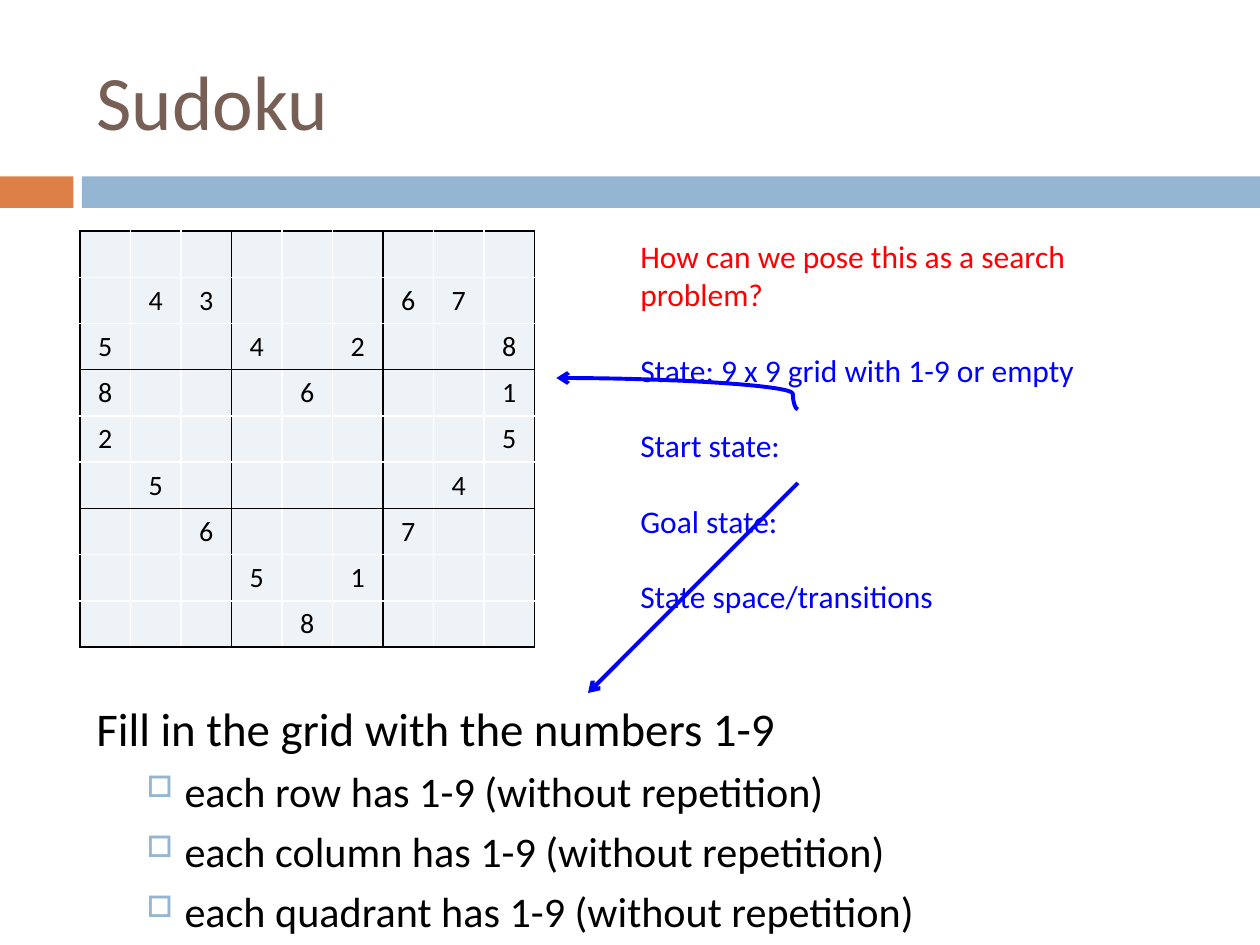
from dataclasses import dataclass

from lxml import etree
from pptx import Presentation
from pptx.dml.color import RGBColor
from pptx.enum.shapes import MSO_CONNECTOR, MSO_SHAPE
from pptx.enum.text import MSO_ANCHOR, PP_ALIGN
from pptx.oxml.ns import qn
from pptx.util import Inches, Pt

RECTANGLE = MSO_SHAPE.RECTANGLE
STRAIGHT, CURVE = MSO_CONNECTOR.STRAIGHT, MSO_CONNECTOR.CURVE
CENTER = PP_ALIGN.CENTER
TOP, MIDDLE = MSO_ANCHOR.TOP, MSO_ANCHOR.MIDDLE

COLUMNS, ROWS = 120, 90  # layout grid of the slide
CELL = Inches(10) / COLUMNS
BLOCK = 3
SIDE = BLOCK * BLOCK


@dataclass(frozen=True)
class Theme:
    font: str = "Calibri"
    title: str = "775F55"
    orange: str = "DD8047"
    blue: str = "94B6D2"
    cell: str = "EEF3F7"
    black: str = "000000"
    white: str = "FFFFFF"
    question: str = "FF0000"
    answer: str = "0000FF"
    title_size: float = 44
    body_size: float = 26.8
    bullet_size: float = 24.1
    note_size: float = 18
    digit_size: float = 16


@dataclass(frozen=True)
class Box:
    """A rectangle in grid columns and rows."""
    column: float
    row: float
    width: float
    height: float

    def lengths(self) -> list[int]:
        return [grid(n) for n in (self.column, self.row, self.width, self.height)]


@dataclass(frozen=True)
class Line:
    text: str
    size: float
    color: str
    space_before: float = 0
    bullet: bool = False


@dataclass(frozen=True)
class Arrow:
    kind: MSO_CONNECTOR
    start: tuple[float, float]
    end: tuple[float, float]
    bend: int | None = None


THEME = Theme()
BARS = [(Box(0, 16.8, 7, 3), THEME.orange), (Box(7.8, 16.8, 112.2, 3), THEME.blue)]
TITLE = [Line("Sudoku", THEME.title_size, THEME.title)]
RULES = [Line("Fill in the grid with the numbers 1-9", THEME.body_size, THEME.black, 7)] + [
    Line(f"each {part} has 1-9 (without repetition)", THEME.bullet_size, THEME.black, 5.5, True)
    for part in ("row", "column", "quadrant")
]
NOTES = [Line("How can we pose this as a search problem?", THEME.note_size, THEME.question)] + [
    Line(text, THEME.note_size, THEME.answer, 21.6)
    for text in ("State: 9 x 9 grid with 1-9 or empty", "Start state:",
                 "Goal state:", "State space/transitions")
]
PUZZLE = [
    ".........",
    ".43...67.",
    "5..4.2..8",
    "8...6...1",
    "2.......5",
    ".5.....4.",
    "..6...7..",
    "...5.1...",
    "....8....",
]
ARROWS = [
    Arrow(CURVE, (76, 39), (53, 36), bend=2100),
    Arrow(STRAIGHT, (76, 46), (56, 66)),
]


def grid(count: float) -> int:
    return round(count * CELL)


def rgb(color: str) -> RGBColor:
    return RGBColor.from_string(color)


def add_bar(slide, box: Box, color: str) -> None:
    bar = slide.shapes.add_shape(RECTANGLE, *box.lengths())
    bar.shadow.inherit = False
    bar.fill.solid()
    bar.fill.fore_color.rgb = rgb(color)
    bar.line.fill.background()


def add_bullet(paragraph) -> None:
    properties = paragraph._p.get_or_add_pPr()
    properties.set("marL", str(Inches(0.7)))
    properties.set("indent", str(Inches(-0.3)))
    color = etree.SubElement(properties, qn("a:buClr"))
    etree.SubElement(color, qn("a:srgbClr"), val=THEME.blue)
    etree.SubElement(properties, qn("a:buSzPct"), val="70000")
    etree.SubElement(properties, qn("a:buChar"), char="□")


def style_runs(paragraph, size: float, color: str) -> None:
    for run in paragraph.runs:
        run.font.name = THEME.font
        run.font.size = Pt(size)
        run.font.color.rgb = rgb(color)


def add_text(slide, box: Box, lines: list[Line], anchor: MSO_ANCHOR = TOP) -> None:
    text_frame = slide.shapes.add_textbox(*box.lengths()).text_frame
    text_frame.word_wrap = True
    text_frame.vertical_anchor = anchor
    text_frame.text = "\n".join(line.text for line in lines)
    for paragraph, line in zip(text_frame.paragraphs, lines):
        paragraph.space_before = Pt(line.space_before)
        if line.bullet:
            paragraph.level = 1
            add_bullet(paragraph)
        style_runs(paragraph, line.size, line.color)


def set_borders(cell, row: int, column: int) -> None:
    """Black on the edges of each block, white inside it."""
    edges = {"a:lnL": column, "a:lnR": column + 1, "a:lnT": row, "a:lnB": row + 1}
    properties = cell._tc.get_or_add_tcPr()
    for position, (tag, edge) in enumerate(edges.items()):
        border = etree.Element(qn(tag), w=str(Pt(1)))
        fill = etree.SubElement(border, qn("a:solidFill"))
        color = THEME.white if edge % BLOCK else THEME.black
        etree.SubElement(fill, qn("a:srgbClr"), val=color)
        properties.insert(position, border)


def add_puzzle(slide, box: Box) -> None:
    table = slide.shapes.add_table(SIDE, SIDE, *box.lengths()).table
    table.first_row = table.horz_banding = False
    for row, digits in enumerate(PUZZLE):
        for column, digit in enumerate(digits):
            cell = table.cell(row, column)
            cell.fill.solid()
            cell.fill.fore_color.rgb = rgb(THEME.cell)
            set_borders(cell, row, column)
            paragraph = cell.text_frame.paragraphs[0]
            paragraph.alignment = CENTER
            if digit == ".":
                size = str(round(THEME.digit_size * 100))
                etree.SubElement(paragraph._p, qn("a:endParaRPr"), sz=size)
            else:
                paragraph.text = digit
                style_runs(paragraph, THEME.digit_size, THEME.black)


def add_arrow(slide, arrow: Arrow) -> None:
    ends = [grid(n) for n in (*arrow.start, *arrow.end)]
    connector = slide.shapes.add_connector(arrow.kind, *ends)
    connector.line.color.rgb = rgb(THEME.answer)
    connector.line.width = Pt(2.25)
    etree.SubElement(connector.line._get_or_add_ln(), qn("a:tailEnd"), type="arrow")
    properties = connector._element.spPr
    etree.SubElement(properties, qn("a:effectLst"))
    if arrow.bend is not None:
        adjustments = properties.find(f".//{qn('a:avLst')}")
        etree.SubElement(adjustments, qn("a:gd"), name="adj1", fmla=f"val {arrow.bend}")


def main() -> None:
    presentation = Presentation()
    presentation.slide_width = grid(COLUMNS)
    presentation.slide_height = grid(ROWS)
    slide = presentation.slides.add_slide(presentation.slide_layouts[6])
    for box, color in BARS:
        add_bar(slide, box, color)
    add_text(slide, Box(8, 3, 107, 13), TITLE, MIDDLE)
    add_puzzle(slide, Box(7.6, 22, 43.3, 39.6))
    add_text(slide, Box(8, 66, 107, 21), RULES)
    add_text(slide, Box(59.8, 22, 54.8, 41.2), NOTES)
    for arrow in ARROWS:
        add_arrow(slide, arrow)
    presentation.save("out.pptx")


if __name__ == "__main__":
    main()
